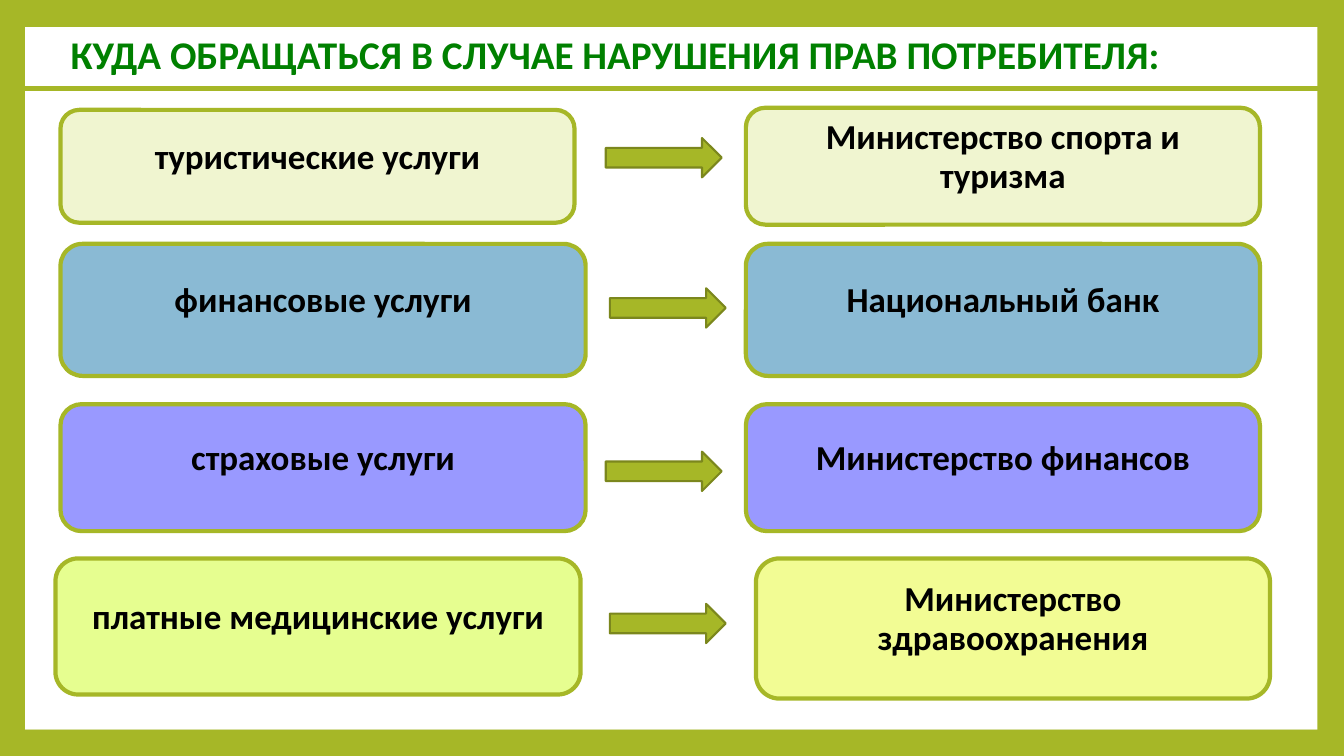
from lxml import etree
from pptx import Presentation
from pptx.dml.color import RGBColor
from pptx.enum.shapes import MSO_CONNECTOR, MSO_SHAPE
from pptx.enum.text import MSO_ANCHOR, MSO_AUTO_SIZE, PP_ALIGN
from pptx.oxml.ns import qn
from pptx.util import Pt

RECTANGLE = MSO_SHAPE.RECTANGLE
ROUNDED = MSO_SHAPE.ROUNDED_RECTANGLE
ARROW = MSO_SHAPE.RIGHT_ARROW
STRAIGHT = MSO_CONNECTOR.STRAIGHT
TOP, MIDDLE = MSO_ANCHOR.TOP, MSO_ANCHOR.MIDDLE
LEFT, CENTER = PP_ALIGN.LEFT, PP_ALIGN.CENTER
NO_AUTOFIT = MSO_AUTO_SIZE.NONE
TITLE_ONLY = 5

COLORS = {
    "frame": "A6B727",
    "page": "FFFFFF",
    "title": "008000",
    "text": "000000",
    "arrow_line": "7B871D",
    "cream": "F0F5D0",
    "blue": "8ABAD4",
    "violet": "9999FF",
    "lime": "E6FE90",
    "lemon": "F2FC94",
}
TITLE = "КУДА ОБРАЩАТЬСЯ В СЛУЧАЕ НАРУШЕНИЯ ПРАВ ПОТРЕБИТЕЛЯ:"
LINE_STEP = 14
ARROW_SIZE = (82.8, 28.1)

ROWS = [
    {"service": "туристические услуги", "service_box": (43.2, 78.5, 367.2, 80.6), "service_fill": "cream",
     "authority": ["Министерство спорта и", "туризма"],
     "authority_box": (532.8, 77, 367.2, 83.5), "authority_fill": "cream", "arrow": (432.7, 98.6)},
    {"service": "финансовые услуги", "service_box": (43.2, 174.2, 375.1, 94.3), "service_fill": "blue",
     "authority": ["Национальный банк"],
     "authority_box": (532.8, 174.2, 367.2, 94.3), "authority_fill": "blue", "arrow": (435.6, 205.9)},
    {"service": "страховые услуги", "service_box": (43.2, 288.7, 375.1, 90.7), "service_fill": "violet",
     "authority": ["Министерство финансов"],
     "authority_box": (532.8, 288.7, 367.2, 90.7), "authority_fill": "violet", "arrow": (432.7, 322.6)},
    {"service": "платные медицинские услуги", "service_box": (39.6, 398.9, 375.1, 97.2), "service_fill": "lime",
     "authority": ["Министерство", "здравоохранения"],
     "authority_box": (540, 398.9, 367.2, 100.1), "authority_fill": "lemon", "arrow": (435.6, 431.3)},
]


def color(name):
    return RGBColor.from_string(COLORS[name])


def apply_format(target, values):
    for name, value in values.items():
        setattr(target, name, value)


def style_font(font, size, color_name):
    apply_format(font, {"name": "Calibri", "size": Pt(size), "bold": True})
    font.color.rgb = color(color_name)


def add_filled_shape(slide, kind, box, fill, line=None, line_width=0):
    shape = slide.shapes.add_shape(kind, *map(Pt, box))
    shape.shadow.inherit = False
    shape.fill.solid()
    shape.fill.fore_color.rgb = color(fill)
    if line:
        shape.line.color.rgb = color(line)
        shape.line.width = Pt(line_width)
    else:
        shape.line.fill.background()
    return shape


def add_card(slide, box, fill, lines):
    shape = add_filled_shape(slide, ROUNDED, box, fill, "frame", 3)
    frame = shape.text_frame
    apply_format(frame, {"word_wrap": True, "vertical_anchor": MIDDLE})
    for index, line in enumerate(lines):
        paragraph = frame.add_paragraph() if index else frame.paragraphs[0]
        paragraph.text = line
        apply_format(paragraph, {
            "alignment": CENTER,
            "line_spacing": Pt(LINE_STEP),
            "space_before": Pt(LINE_STEP if index else 0),
        })
        style_font(paragraph.runs[0].font, 25, "text")


def add_rule(slide, left, right, top):
    rule = slide.shapes.add_connector(STRAIGHT, Pt(left), Pt(top), Pt(right), Pt(top))
    rule.line.color.rgb = color("frame")
    rule.line.width = Pt(3)
    etree.SubElement(rule.line._get_or_add_ln().getparent(), qn("a:effectLst"))


def format_title(slide):
    title = slide.shapes.title
    apply_format(title, {"left": Pt(43.2), "top": Pt(18), "width": Pt(885.6), "height": Pt(41)})
    title.text = TITLE
    apply_format(title.text_frame, {"word_wrap": True, "vertical_anchor": TOP, "auto_size": NO_AUTOFIT})
    paragraph = title.text_frame.paragraphs[0]
    paragraph.alignment = LEFT
    style_font(paragraph.runs[0].font, 28, "title")


def add_background(slide):
    slide.background.fill.solid()
    slide.background.fill.fore_color.rgb = color("frame")
    page = add_filled_shape(slide, RECTANGLE, (18, 19.4, 923, 501.8), "page")
    slide.shapes.title._element.addprevious(page._element)
    add_filled_shape(slide, RECTANGLE, (0, 521.3, 960, 18.7), "frame")


def main():
    presentation = Presentation()
    apply_format(presentation, {"slide_width": Pt(960), "slide_height": Pt(540)})
    slide = presentation.slides.add_slide(presentation.slide_layouts[TITLE_ONLY])
    add_background(slide)
    format_title(slide)
    add_rule(slide, 15.1, 948.2, 63.2)
    for row in ROWS:
        add_card(slide, row["service_box"], row["service_fill"], [row["service"]])
        add_filled_shape(slide, ARROW, row["arrow"] + ARROW_SIZE, "frame", "arrow_line", 1.5)
        add_card(slide, row["authority_box"], row["authority_fill"], row["authority"])
    presentation.save("out.pptx")


if __name__ == "__main__":
    main()
